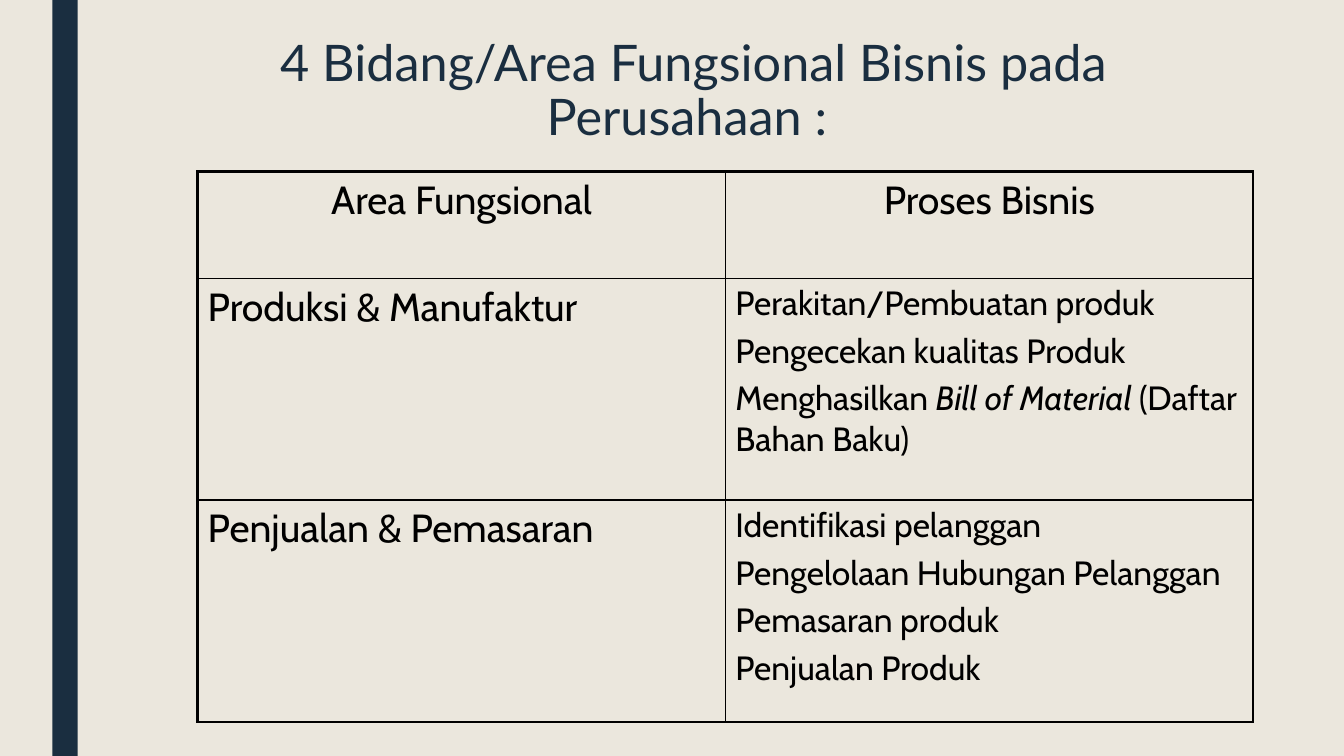
from lxml import etree
from pptx import Presentation
from pptx.dml.color import RGBColor
from pptx.enum import shapes, text
from pptx.oxml import ns
from pptx.util import Cm, Pt

HUES = {"paper": "EBE7DD", "navy": "1A2E40", "ink": "000000"}
THICK, THIN = 2.25, 1
WIDTHS = [13.3, 13.3]
HEIGHTS = [2.69, 5.59, 5.59]
# Each paragraph is a list of runs; odd runs are italic.
ROWS = [
    ([["Area Fungsional"]], [["Proses Bisnis"]]),
    ([["Produksi & Manufaktur"]],
     [["Perakitan/Pembuatan produk"],
      ["Pengecekan kualitas Produk"],
      ["Menghasilkan ", "Bill of Material", " (Daftar Bahan Baku)"]]),
    ([["Penjualan & Pemasaran"]],
     [["Identifikasi pelanggan"],
      ["Pengelolaan Hubungan Pelanggan"],
      ["Pemasaran produk"],
      ["Penjualan Produk"]]),
]


def hue(name):
    return RGBColor.from_string(HUES[name])


def style(font, face, size, color):
    font.name = face
    font.size = Pt(size)
    font.color.rgb = hue(color)


def add_bar(slide):
    bar = slide.shapes.add_shape(
        shapes.MSO_SHAPE.RECTANGLE, Cm(1.32), 0, Cm(0.64), Cm(19.05))
    bar.shadow.inherit = False
    bar.fill.solid()
    bar.fill.fore_color.rgb = hue("navy")
    bar.line.fill.background()


def set_title(slide):
    title = slide.shapes.title
    title.left, title.top = Cm(6.78), Cm(0.84)
    title.width, title.height = Cm(21.39), Cm(3.99)
    frame = title.text_frame
    frame.text = "4 Bidang/Area Fungsional Bisnis pada Perusahaan : "
    frame.word_wrap = True
    frame.auto_size = text.MSO_AUTO_SIZE.NONE
    frame.vertical_anchor = text.MSO_ANCHOR.TOP
    para = frame.paragraphs[0]
    para.alignment = text.PP_ALIGN.CENTER
    para.line_spacing = 0.89
    style(para.runs[0].font, "Lato", 36, "navy")


def set_edges(cell, edges):
    """Draw the cell's borders; edges maps L, R, T and B to points."""
    props = cell._tc.get_or_add_tcPr()
    for spot, side in enumerate("LRTB"):
        line = etree.Element(ns.qn(f"a:ln{side}"), w=str(Pt(edges[side])))
        fill = etree.SubElement(line, ns.qn("a:solidFill"))
        etree.SubElement(fill, ns.qn("a:srgbClr"), val=HUES["ink"])
        props.insert(spot, line)


def fill_cell(cell, paras, size, align):
    cell.fill.background()
    cell.vertical_anchor = text.MSO_ANCHOR.TOP
    frame = cell.text_frame
    for index, parts in enumerate(paras):
        para = frame.add_paragraph() if index else frame.paragraphs[0]
        para.alignment = align
        para.space_before = Pt(size * 0.2 if index else 0)
        for place, part in enumerate(parts):
            run = para.add_run()
            run.text = part
            style(run.font, "Cabin", size, "ink")
            if place % 2:
                run.font.italic = True


def add_grid(slide):
    rows, cols = len(HEIGHTS), len(WIDTHS)
    grid = slide.shapes.add_table(
        rows, cols, Cm(4.98), Cm(4.32),
        Cm(sum(WIDTHS)), Cm(sum(HEIGHTS))).table
    grid.first_row = grid.horz_banding = False
    for col, width in zip(grid.columns, WIDTHS):
        col.width = Cm(width)
    for r, row in enumerate(ROWS):
        grid.rows[r].height = Cm(HEIGHTS[r])
        for c, paras in enumerate(row):
            cell = grid.cell(r, c)
            size = 24 if r and c else 28
            align = text.PP_ALIGN.LEFT if r else text.PP_ALIGN.CENTER
            fill_cell(cell, paras, size, align)
            outer = {"L": c == 0, "R": c == cols - 1,
                     "T": r == 0, "B": r == rows - 1}
            set_edges(cell, {side: THICK if out else THIN
                             for side, out in outer.items()})


def main():
    deck = Presentation()
    deck.slide_width, deck.slide_height = Cm(33.87), Cm(19.05)
    slide = deck.slides.add_slide(deck.slide_layouts[5])
    slide.background.fill.solid()
    slide.background.fill.fore_color.rgb = hue("paper")
    add_bar(slide)
    set_title(slide)
    add_grid(slide)
    deck.save("out.pptx")


if __name__ == "__main__":
    main()
